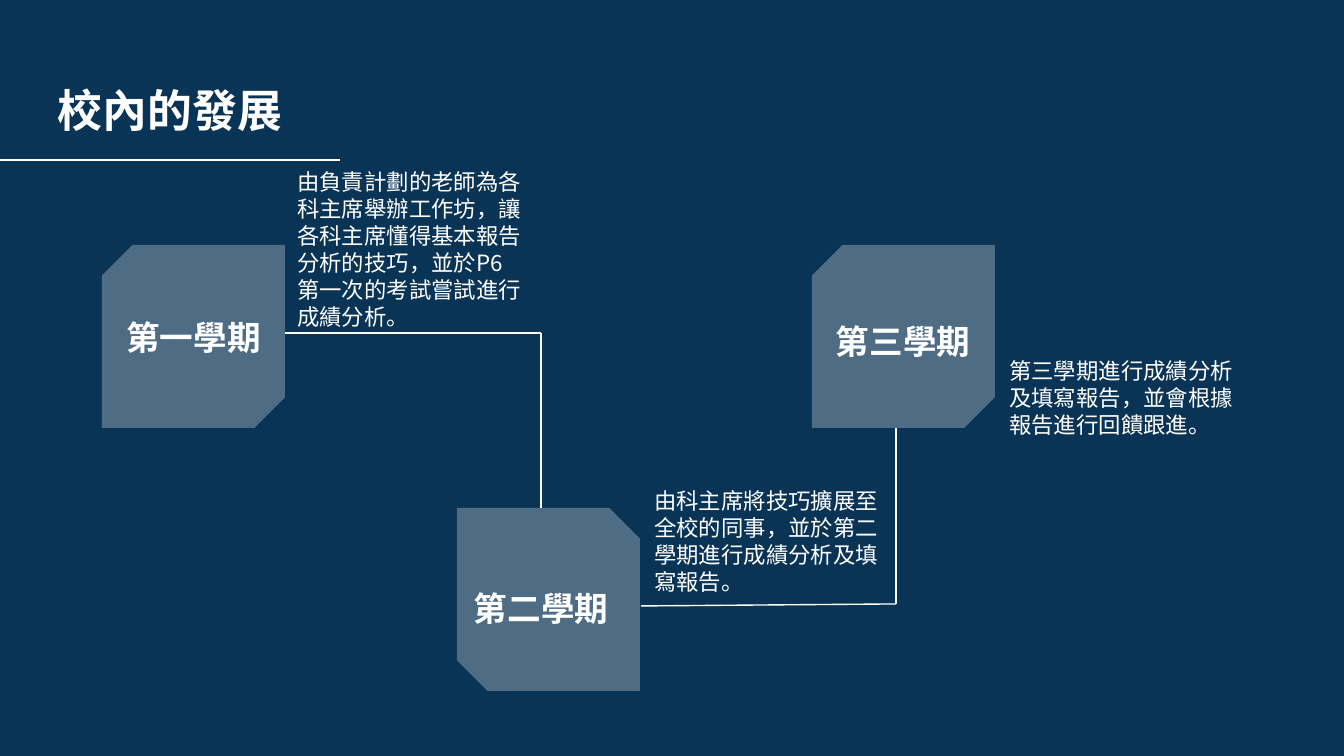
import pptx
import pptx.dml.color
import pptx.enum.shapes
import pptx.enum.text
import pptx.oxml
import pptx.oxml.ns
import pptx.util

SCALE = 914400 / 134.4
FONT = "Noto Sans CJK SC"
COLORS = {"background": "0A3455", "foreground": "FFFFFF"}
LINE_RATIO = 1.21
BLOCK_SIZE = 183
SNIP = 0.167
BLOCK_OPACITY = 28

ALIGN = pptx.enum.text.PP_ALIGN
AUTO_SIZE = pptx.enum.text.MSO_AUTO_SIZE
HEADING = {"size": 24, "bold": True, "align": ALIGN.CENTER,
           "inset": 13, "auto_size": AUTO_SIZE.NONE}
LABEL = {**HEADING, "size": 18}
BODY = {"size": 12, "bold": False, "align": ALIGN.LEFT,
        "inset": None, "auto_size": AUTO_SIZE.SHAPE_TO_FIT_TEXT}

TERMS = [
    {"block": (102, 245), "snips": (SNIP, 0),
     "label": ("第一學期", (107, 304, 173, 58)),
     "body": ("由負責計劃的老師為各科主席舉辦工作坊，讓各科主席懂得基本報告分析的技巧，"
              "並於P6第一次的考試嘗試進行成績分析。", (284, 161, 251, 176))},
    {"block": (457, 508), "snips": (0, SNIP),
     "label": ("第二學期", (459, 575, 164, 58)),
     "body": ("由科主席將技巧擴展至全校的同事，並於第二學期進行成績分析及填寫報告。",
              (641, 480, 251, 122))},
    {"block": (812, 245), "snips": (SNIP, 0),
     "label": ("第三學期", (821, 308, 164, 58)),
     "body": ("第三學期進行成績分析及填寫報告，並會根據報告進行回饋跟進。",
              (996, 350, 251, 95))},
]
ROUTES = [
    [(0, 160), (340, 160)],
    [(285, 333), (541, 333), (541, 508)],
    [(641, 606), (896, 604), (896, 428)],
]


def px(value):
    return pptx.util.Emu(round(value * SCALE))


def color(name):
    return pptx.dml.color.RGBColor.from_string(COLORS[name])


def set_attributes(target, values):
    for name, value in values.items():
        setattr(target, name, value)


def write_text(shape, text, style):
    frame = shape.text_frame
    set_attributes(frame, {
        "word_wrap": True,
        "auto_size": style["auto_size"],
        "vertical_anchor": pptx.enum.text.MSO_ANCHOR.TOP,
    })
    if style["inset"] is not None:
        sides = ("left", "top", "right", "bottom")
        set_attributes(frame, {f"margin_{side}": px(style["inset"]) for side in sides})
    paragraph = frame.paragraphs[0]
    set_attributes(paragraph, {
        "alignment": style["align"],
        "line_spacing": pptx.util.Pt(style["size"] * LINE_RATIO),
    })
    run = paragraph.add_run()
    run.text = text
    set_attributes(run.font, {
        "name": FONT,
        "size": pptx.util.Pt(style["size"]),
        "bold": style["bold"],
    })
    run.font.color.rgb = color("foreground")
    latin = run.font._element.find(pptx.oxml.ns.qn("a:latin"))
    east_asian = pptx.oxml.parse_xml(
        f'<a:ea {pptx.oxml.ns.nsdecls("a")} typeface="{FONT}"/>')
    latin.addnext(east_asian)


def add_title(slide, text, box):
    title = slide.shapes.title
    set_attributes(title, dict(zip(("left", "top", "width", "height"), map(px, box))))
    write_text(title, text, HEADING)


def add_text(slide, text, box, style):
    write_text(slide.shapes.add_textbox(*map(px, box)), text, style)


def add_block(slide, position, snips):
    shape = slide.shapes.add_shape(
        pptx.enum.shapes.MSO_SHAPE.SNIP_2_DIAG_RECTANGLE,
        *map(px, (*position, BLOCK_SIZE, BLOCK_SIZE)))
    for index, snip in enumerate(snips):
        shape.adjustments[index] = snip
    shape.shadow.inherit = False
    shape.line.fill.background()
    shape.fill.solid()
    shape.fill.fore_color.rgb = color("foreground")
    fill_color = shape._element.spPr.find(".//" + pptx.oxml.ns.qn("a:srgbClr"))
    fill_color.append(pptx.oxml.parse_xml(
        f'<a:alpha {pptx.oxml.ns.nsdecls("a")} val="{BLOCK_OPACITY * 1000}"/>'))


def add_route(slide, points):
    for start, end in zip(points, points[1:]):
        connector = slide.shapes.add_connector(
            pptx.enum.shapes.MSO_CONNECTOR.STRAIGHT, *map(px, (*start, *end)))
        connector.line.color.rgb = color("foreground")
        connector.line.width = pptx.util.Pt(0.75)
        connector._element.spPr.append(pptx.oxml.parse_xml(
            f'<a:effectLst {pptx.oxml.ns.nsdecls("a")}/>'))


def main():
    presentation = pptx.Presentation()
    set_attributes(presentation, {"slide_width": px(1344), "slide_height": px(756)})
    slide = presentation.slides.add_slide(presentation.slide_layouts[5])
    slide.background.fill.solid()
    slide.background.fill.fore_color.rgb = color("background")

    add_title(slide, "校內的發展", (0, 69, 340, 102))
    for points in ROUTES:
        add_route(slide, points)
    for term in TERMS:
        add_block(slide, term["block"], term["snips"])
    for kind, style in (("label", LABEL), ("body", BODY)):
        for term in TERMS:
            add_text(slide, *term[kind], style)

    presentation.save("out.pptx")


if __name__ == "__main__":
    main()
